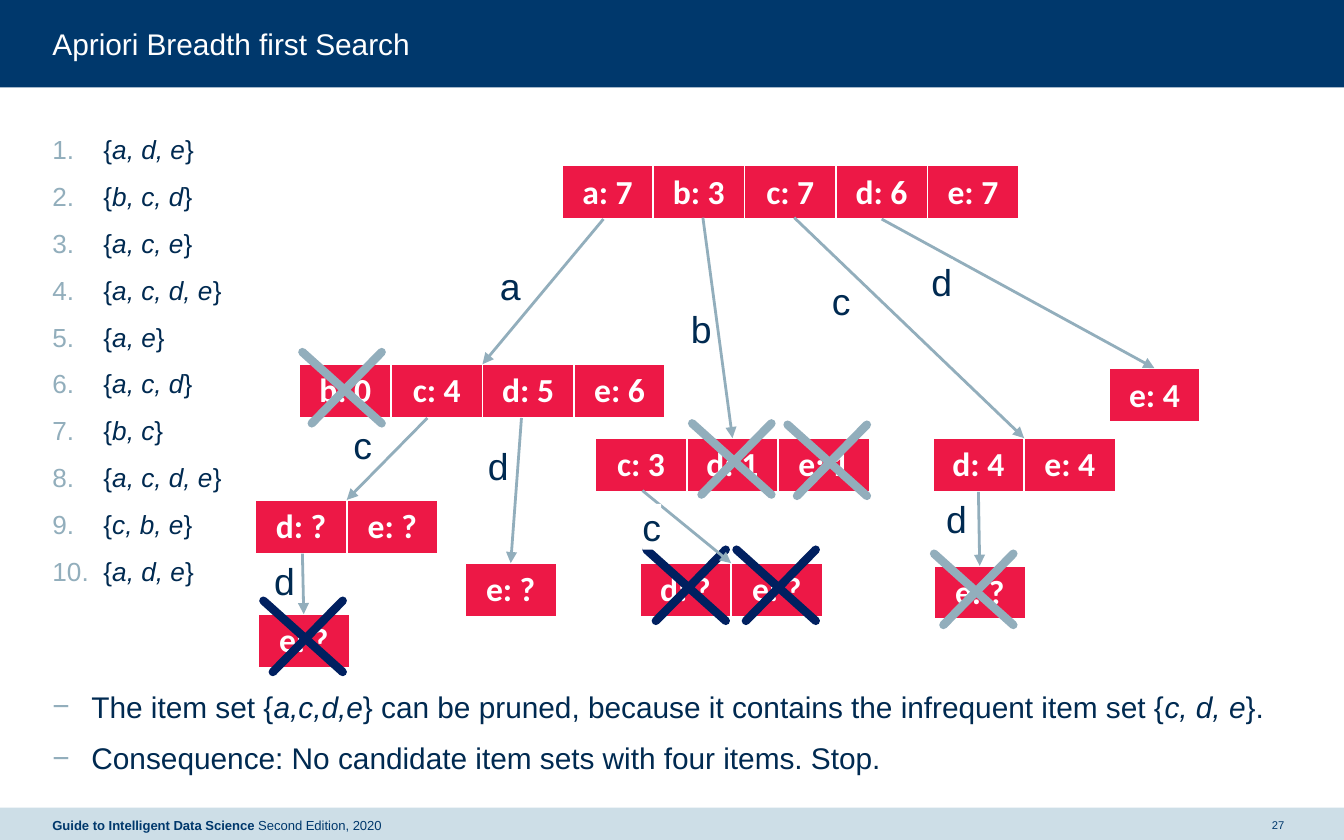
from dataclasses import dataclass

import lxml.etree
import pptx
import pptx.dml.color
import pptx.enum.shapes
import pptx.enum.text
import pptx.oxml
import pptx.oxml.ns
import pptx.util

COLUMNS, ROWS = 1000, 625
CELL_WIDTH, CELL_HEIGHT = 68, 41
CROSS_WIDTH, CROSS_HEIGHT, CROSS_INDENT = 59, 53, 7
LABEL_HEIGHT = 34
MARGIN = 39
COLORS = {
    "white": "FFFFFF", "navy": "00386C", "ice": "CDDEE7", "ink": "002A51",
    "steel": "92AEBC", "red": "ED1846", "midnight": "002060",
}

deck = pptx.Presentation()
deck.slide_width = pptx.util.Inches(10)
deck.slide_height = pptx.util.Inches(6.25)
page = deck.slides.add_slide(deck.slide_layouts[5])


@dataclass
class Node:
    """A row of counters, with the branch that leads from its parent to it."""
    left: int
    top: int
    items: list[str]
    start: tuple[int, int] | None = None
    label: str = ""
    label_at: tuple[int, int] = (0, 0)


@dataclass
class Cross:
    left: int
    top: int
    color: str = "steel"


NODES = [
    Node(418, 123, ["a: 7", "b: 3", "c: 7", "d: 6", "e: 7"]),
    Node(223, 271, ["b: 0", "c: 4", "d: 5", "e: 6"], (449, 163), "a", (372, 196)),
    Node(443, 326, ["c: 3", "d: 1", "e: 1"], (523, 162), "b", (514, 228)),
    Node(694, 326, ["d: 4", "e: 4"], (591, 162), "c", (619, 207)),
    Node(825, 274, ["e: 4"], (656, 163), "d", (693, 193)),
    Node(190, 372, ["d: ?", "e: ?"], (318, 311), "c", (263, 314)),
    Node(346, 419, ["e: ?"], (388, 311), "d", (363, 330)),
    Node(476, 419, ["d: ?", "e: ?"], (478, 365), "c", (478, 375)),
    Node(695, 421, ["e: ?"], (728, 366), "d", (704, 369)),
    Node(192, 457, ["e: ?"], (225, 412), "d", (204, 415)),
]
CROSSES = [
    Cross(225, 262), Cross(515, 315), Cross(586, 316), Cross(695, 412),
    Cross(481, 409, "midnight"), Cross(548, 409, "midnight"), Cross(196, 447, "midnight"),
]
# Underscores mark where italics start and stop.
TRANSACTIONS = [
    f"{{_{items}_}}" for items in (
        "a, d, e", "b, c, d", "a, c, e", "a, c, d, e", "a, e",
        "a, c, d", "b, c", "a, c, d, e", "c, b, e", "a, d, e")
]
CONCLUSIONS = [
    "The item set {_a,c,d,e_} can be pruned, because it contains the infrequent item set {_c, d, e_}.",
    "Consequence: No candidate item sets with four items. Stop.",
]


def col(count: float) -> int:
    return round(deck.slide_width * count / COLUMNS)


def row(count: float) -> int:
    return round(deck.slide_height * count / ROWS)


def area(left: float, top: float, width: float, height: float) -> tuple[int, int, int, int]:
    return col(left), row(top), col(width), row(height)


def rgb(name: str) -> pptx.dml.color.RGBColor:
    return pptx.dml.color.RGBColor.from_string(COLORS[name])


def add_xml(parent, tag: str, **attributes: str):
    return lxml.etree.SubElement(parent, pptx.oxml.ns.qn(tag), attributes)


def style(para, size: float, color: str, name: str = "Arial", bold: bool | None = None) -> None:
    para.font.size = pptx.util.Pt(size)
    para.font.name = name
    para.font.bold = bold
    para.font.color.rgb = rgb(color)


def clear_frame(frame, wrap: bool = True, middle: bool = False) -> None:
    frame.margin_left = frame.margin_right = frame.margin_top = frame.margin_bottom = 0
    frame.word_wrap = wrap
    anchors = pptx.enum.text.MSO_ANCHOR
    frame.vertical_anchor = anchors.MIDDLE if middle else anchors.TOP


def draw_band(top: float, height: float, color: str):
    band = page.shapes.add_shape(
        pptx.enum.shapes.MSO_SHAPE.RECTANGLE, *area(0, top, COLUMNS, height))
    band.shadow.inherit = False
    band.fill.solid()
    band.fill.fore_color.rgb = rgb(color)
    band.line.fill.background()
    return band


def draw_text(place: tuple[int, int, int, int], wrap: bool = True, middle: bool = False):
    box = page.shapes.add_textbox(*place)
    clear_frame(box.text_frame, wrap, middle)
    return box


def draw_list(top: int, height: int, lines: list[str], size: int, indent: int,
              bullet: str, **bullet_settings: str) -> None:
    frame = draw_text(area(MARGIN, top, 922, height)).text_frame
    for index, line in enumerate(lines):
        para = frame.add_paragraph() if index else frame.paragraphs[0]
        settings = para._p.get_or_add_pPr()
        settings.set("marL", str(col(indent)))
        settings.set("indent", str(-col(indent)))
        add_xml(add_xml(settings, "a:buClr"), "a:srgbClr", val=COLORS["steel"])
        add_xml(settings, "a:buFont", typeface="Arial")
        add_xml(settings, bullet, **bullet_settings)
        para.line_spacing = 1.05
        para.space_before = pptx.util.Pt(7.5)
        style(para, size, "ink")
        for position, part in enumerate(line.split("_")):
            span = para.add_run()
            span.text = part
            span.font.italic = position % 2 == 1


def draw_line(start: tuple[int, int], end: tuple[int, int], color: str, width: float,
              **ending: str) -> None:
    line = page.shapes.add_connector(
        pptx.enum.shapes.MSO_CONNECTOR.STRAIGHT,
        col(start[0]), row(start[1]), col(end[0]), row(end[1]))
    line.line.color.rgb = rgb(color)
    line.line.width = pptx.util.Pt(width)
    outline = line.line._get_or_add_ln()
    if ending:
        add_xml(outline, "a:tailEnd", **ending)
    else:
        outline.set("cap", "rnd")
    add_xml(line._element.spPr, "a:effectLst")


def draw_node(node: Node) -> None:
    count = len(node.items)
    table = page.shapes.add_table(
        1, count, *area(node.left, node.top, count * CELL_WIDTH, CELL_HEIGHT)).table
    table.first_row = table.horz_banding = False
    for cell, item in zip(table.iter_cells(), node.items):
        for side, width in (("L", 1), ("R", 1), ("T", 1), ("B", 3)):
            border = add_xml(cell._tc.get_or_add_tcPr(), f"a:ln{side}",
                             w=str(pptx.util.Pt(width)))
            add_xml(add_xml(border, "a:solidFill"), "a:srgbClr", val=COLORS["white"])
        cell.fill.solid()
        cell.fill.fore_color.rgb = rgb("red")
        cell.text = item
        para = cell.text_frame.paragraphs[0]
        para.alignment = pptx.enum.text.PP_ALIGN.CENTER
        style(para, 18, "white", "Calibri", True)


def draw_branch(node: Node) -> None:
    """Draw the arrow to the middle of the node's top, then its label."""
    middle = node.left + len(node.items) * CELL_WIDTH / 2
    draw_line(node.start, (middle, node.top), "steel", 1.5, type="triangle")
    width = 14 if node.label == "c" else 16
    box = draw_text(area(*node.label_at, width, LABEL_HEIGHT), wrap=False)
    box.fill.solid()
    box.fill.fore_color.rgb = rgb("white")
    para = box.text_frame.paragraphs[0]
    para.text = node.label
    style(para, 20, "ink")


def draw_cross(cross: Cross) -> None:
    right, bottom = cross.left + CROSS_WIDTH, cross.top + CROSS_HEIGHT
    draw_line((cross.left, cross.top), (right, bottom), cross.color, 4.5)
    draw_line((right, cross.top), (cross.left + CROSS_INDENT, bottom), cross.color, 4.5)


def draw_title() -> None:
    title = page.shapes.title
    draw_band(0, 65, "navy")._element.addnext(title._element)
    title.left, title.top, title.width, title.height = area(MARGIN, 19, 922, 27)
    clear_frame(title.text_frame)
    title.text_frame.auto_size = pptx.enum.text.MSO_AUTO_SIZE.NONE
    para = title.text_frame.paragraphs[0]
    para.text = "Apriori Breadth first Search"
    para.alignment = pptx.enum.text.PP_ALIGN.LEFT
    style(para, 16, "white")


def draw_footer() -> None:
    draw_band(601, 24, "ice")
    source = draw_text(area(MARGIN, 601, 439, 26), middle=True).text_frame.paragraphs[0]
    style(source, 7, "navy")
    for text, bold in (("Guide to Intelligent Data Science ", True), ("Second Edition, 2020", False)):
        span = source.add_run()
        span.text = text
        span.font.bold = bold
    number = draw_text(area(941, 601, 20, 26), middle=True).text_frame.paragraphs[0]
    number.text = "27"
    number.alignment = pptx.enum.text.PP_ALIGN.CENTER
    style(number, 6, "navy")


draw_title()
draw_footer()
draw_list(98, 340, TRANSACTIONS, 14, 38, "a:buAutoNum", type="arabicPeriod")
draw_list(511, 70, CONCLUSIONS, 16, 29, "a:buChar", char="−")
for node in NODES:
    draw_node(node)
for cross in CROSSES:
    draw_cross(cross)
for node in NODES[1:]:
    draw_branch(node)
deck.save("out.pptx")
